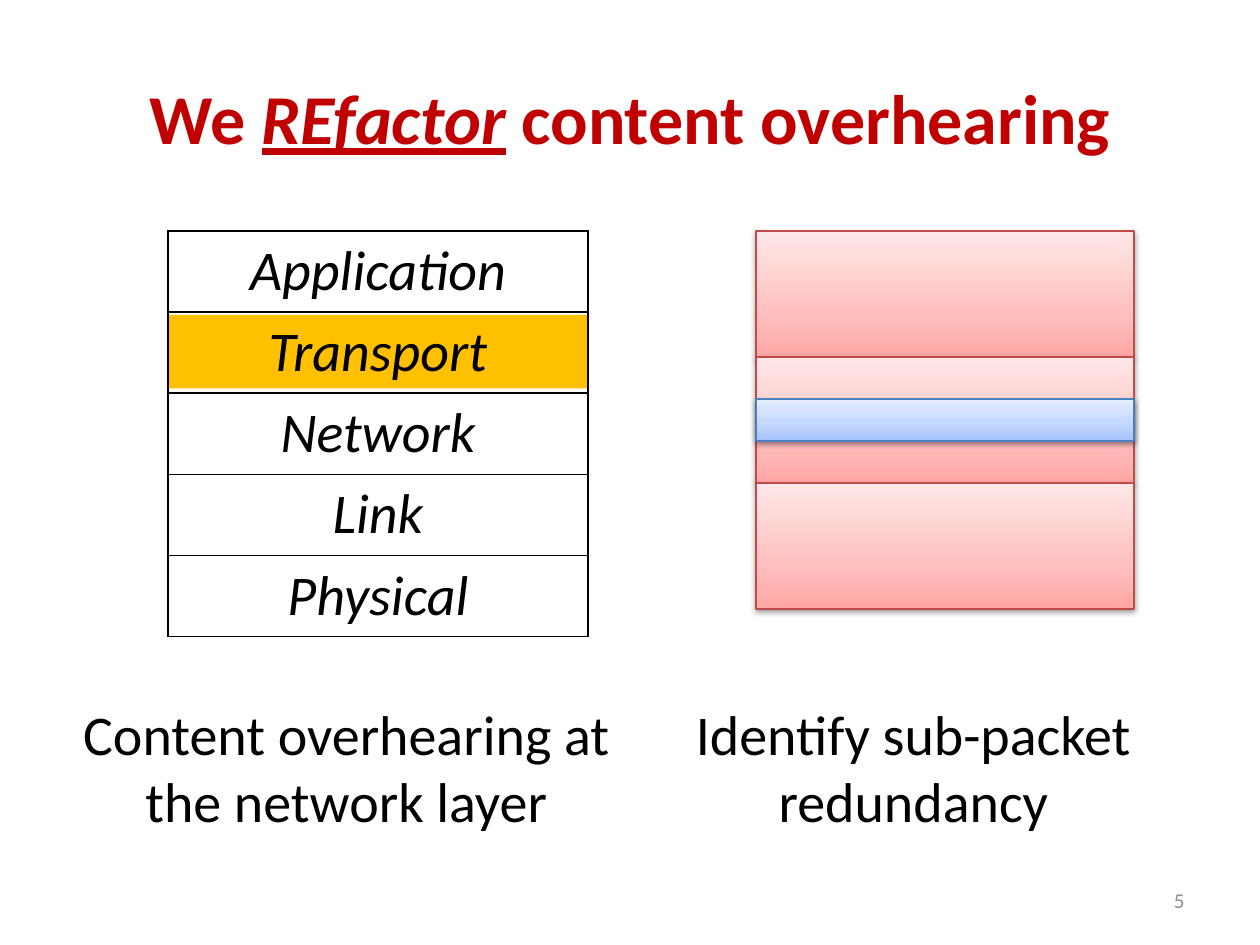
from dataclasses import dataclass

from lxml import etree
from pptx import Presentation
from pptx import util as u
from pptx.dml.color import RGBColor
from pptx.enum import shapes, text
from pptx.oxml import ns, parse_xml

PX = u.Inches(1) // 96
ALIGN = text.PP_ALIGN


@dataclass(frozen=True)
class Palette:
    """Line colour and gradient stops (percent, colour) of a block."""
    line: str
    stops: tuple[tuple[int, str], ...]


@dataclass(frozen=True)
class Theme:
    font: str = "Calibri"
    ink: str = "000000"
    title: str = "C00000"
    muted: str = "8C8C8C"
    highlight: str = "FFC000"
    title_size: int = 40
    body_size: int = 32
    number_size: int = 12
    packet: Palette = Palette("BF4C48", ((0, "FFA6A5"), (35, "FFC0BF"), (100, "FFE7E7")))
    redundancy: Palette = Palette("4B7EBC", ((0, "A4C4FF"), (35, "BFD4FF"), (100, "E6EEFF")))


@dataclass(frozen=True)
class Box:
    left: int
    top: int
    width: int
    height: int

    def emu(self) -> tuple[int, ...]:
        return tuple(value * PX for value in (self.left, self.top, self.width, self.height))


THEME = Theme()
LAYERS = ("Application", "Transport", "Network", "Link", "Physical")
STACK = Box(128, 176, 320, 305)
TRANSPORT_BAND = Box(128, 240, 320, 56)
PACKETS = [Box(576, 176 + 96 * index, 288, 96) for index in range(3)]
REDUNDANCY = Box(576, 304, 288, 32)
CAPTIONS = (
    (Box(48, 528, 432, 128), "Content overhearing at the network layer"),
    (Box(480, 528, 432, 128), "Identify sub-packet redundancy"),
)


def add_text(paragraph, content: str, *, size: int = THEME.body_size, color: str = THEME.ink,
             bold: bool = False, italic: bool = False, underline: bool = False,
             align=ALIGN.CENTER) -> None:
    paragraph.alignment = align
    run = paragraph.add_run()
    run.text = content
    font = run.font
    font.name, font.size = THEME.font, u.Pt(size)
    font.bold, font.italic, font.underline = bold, italic, underline
    font.color.rgb = RGBColor.from_string(color)


def place(shape, box: Box) -> None:
    shape.left, shape.top, shape.width, shape.height = box.emu()


def prepare_frame(shape, anchor):
    """Fix wrapping and anchoring, and return the first paragraph."""
    frame = shape.text_frame
    frame.word_wrap = True
    frame.auto_size = text.MSO_AUTO_SIZE.NONE
    frame.vertical_anchor = anchor
    return frame.paragraphs[0]


def add_rectangle(slide, box: Box):
    shape = slide.shapes.add_shape(shapes.MSO_SHAPE.RECTANGLE, *box.emu())
    shape.shadow.inherit = False
    return shape


def add_block(slide, box: Box, palette: Palette) -> None:
    """Draw a gradient rectangle with a soft shadow below it."""
    shape = add_rectangle(slide, box)
    shape.line.color.rgb = RGBColor.from_string(palette.line)
    shape.line.width = u.Pt(0.75)
    shape.fill.gradient()
    shape.fill.gradient_angle = 90
    properties = shape._element.spPr
    stops = properties.find(".//" + ns.qn("a:gsLst"))
    for stop in list(stops):
        stops.remove(stop)
    for percent, color in palette.stops:
        stop = etree.SubElement(stops, ns.qn("a:gs"), pos=str(percent * 1000))
        etree.SubElement(stop, ns.qn("a:srgbClr"), val=color)
    properties.find(ns.qn("a:effectLst")).append(parse_xml(
        f'<a:outerShdw {ns.nsdecls("a")} blurRad="40000" dist="20000" dir="5400000" '
        'rotWithShape="0"><a:srgbClr val="000000"><a:alpha val="38000"/></a:srgbClr>'
        '</a:outerShdw>'))


def add_borders(cell) -> None:
    properties = cell._tc.get_or_add_tcPr()
    for index, side in enumerate("LRTB"):
        properties.insert(index, parse_xml(
            f'<a:ln{side} {ns.nsdecls("a")} w="{u.Pt(1)}"><a:solidFill>'
            f'<a:srgbClr val="{THEME.ink}"/></a:solidFill></a:ln{side}>'))


def add_stack(slide) -> None:
    """Draw the protocol layers over the highlighted transport band."""
    band = add_rectangle(slide, TRANSPORT_BAND)
    band.fill.solid()
    band.fill.fore_color.rgb = RGBColor.from_string(THEME.highlight)
    band.line.fill.background()
    table = slide.shapes.add_table(len(LAYERS), 1, *STACK.emu()).table
    table.first_row = table.horz_banding = False
    for row, layer in zip(table.rows, LAYERS):
        cell = row.cells[0]
        cell.fill.background()
        add_borders(cell)
        add_text(cell.text_frame.paragraphs[0], layer, italic=True)


def add_title(slide) -> None:
    title = slide.shapes.title
    place(title, Box(48, 29, 864, 120))
    paragraph = prepare_frame(title, text.MSO_ANCHOR.MIDDLE)
    for content, emphasis in (("We ", False), ("REfactor", True), (" content overhearing", False)):
        add_text(paragraph, content, size=THEME.title_size, color=THEME.title,
                 bold=True, italic=emphasis, underline=emphasis)


def add_caption(placeholder, box: Box, content: str) -> None:
    place(placeholder, box)
    paragraph = prepare_frame(placeholder, text.MSO_ANCHOR.TOP)
    add_text(paragraph, content)
    paragraph.space_before = u.Pt(16)
    properties = paragraph._p.get_or_add_pPr()
    properties.set("marL", "0")
    properties.set("indent", "0")
    etree.SubElement(properties, ns.qn("a:buNone"))


def add_slide_number(slide, number: int) -> None:
    shape = slide.shapes.add_textbox(*Box(688, 667, 224, 38).emu())
    paragraph = prepare_frame(shape, text.MSO_ANCHOR.MIDDLE)
    add_text(paragraph, str(number), size=THEME.number_size, color=THEME.muted, align=ALIGN.RIGHT)


def main() -> None:
    presentation = Presentation()
    presentation.slide_width, presentation.slide_height = 960 * PX, 720 * PX
    slide = presentation.slides.add_slide(presentation.slide_layouts.get_by_name("Two Content"))
    add_title(slide)
    for index, (box, content) in enumerate(CAPTIONS, start=1):
        add_caption(slide.placeholders[index], box, content)
    add_stack(slide)
    add_slide_number(slide, 5)
    for box in PACKETS:
        add_block(slide, box, THEME.packet)
    add_block(slide, REDUNDANCY, THEME.redundancy)
    presentation.save("out.pptx")


if __name__ == "__main__":
    main()
